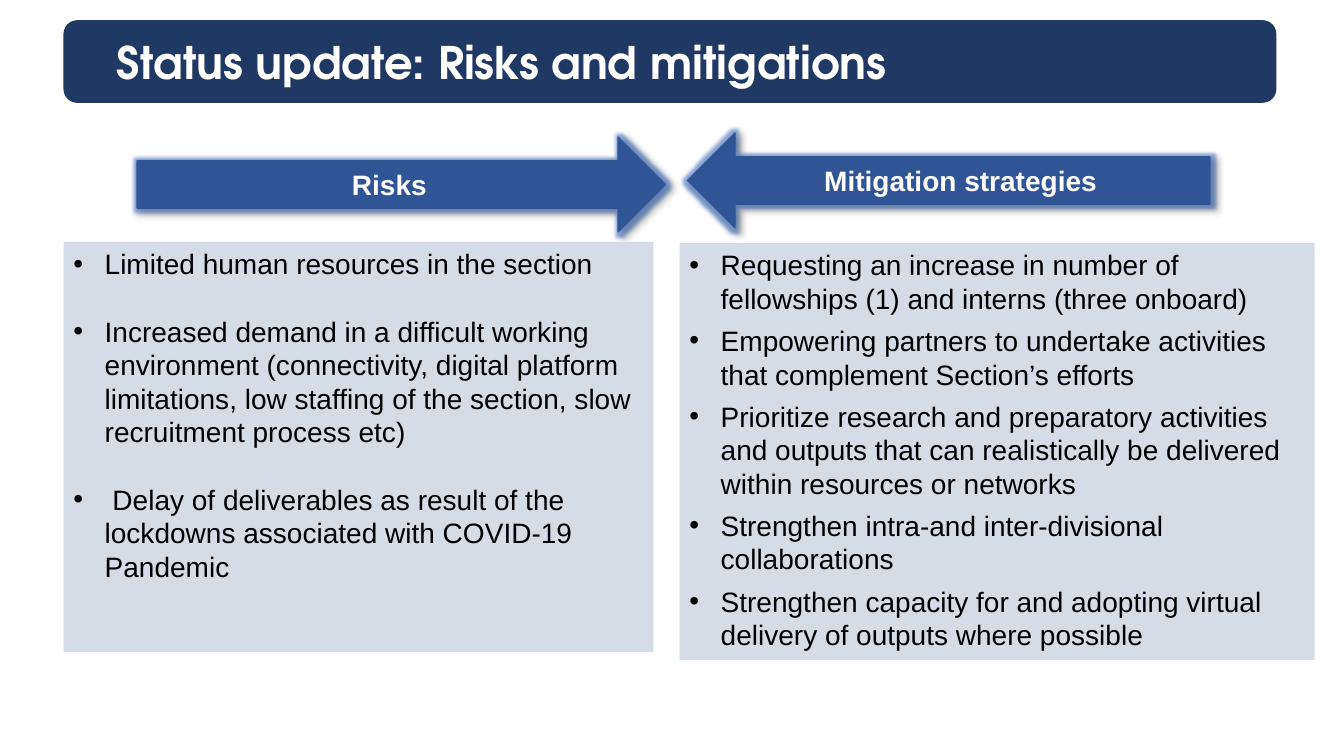
from dataclasses import dataclass

from lxml import etree
from pptx import Presentation
from pptx.dml.color import RGBColor
from pptx.enum.shapes import MSO_SHAPE
from pptx.enum.text import MSO_ANCHOR, PP_ALIGN
from pptx.oxml.ns import qn
from pptx.util import Inches, Pt

RECTANGLE, ROUNDED = MSO_SHAPE.RECTANGLE, MSO_SHAPE.ROUNDED_RECTANGLE
RIGHT_ARROW, LEFT_ARROW = MSO_SHAPE.RIGHT_ARROW, MSO_SHAPE.LEFT_ARROW
TOP, MIDDLE = MSO_ANCHOR.TOP, MSO_ANCHOR.MIDDLE
LEFT, CENTER = PP_ALIGN.LEFT, PP_ALIGN.CENTER


@dataclass(frozen=True)
class Theme:
    navy: str = "203864"
    arrow: str = "2F5597"
    arrow_line: str = "325491"
    glow: str = "4472C4"
    panel: str = "D6DCE5"
    white: str = "FFFFFF"
    black: str = "000000"
    title_font: str = "TeX Gyre Adventor"
    body_font: str = "Arial"
    title_size: int = 32
    body_size: int = 20


THEME = Theme()
SLIDE_SIZE = (13.33, 7.5)
INDENT = 0.31

TITLE = "Status update: Risks and mitigations"
TITLE_AREA = (0.63, 0.2, 12.03, 0.82)

# Areas are left, top, width, height in inches; gap is points after a paragraph.
COLUMNS = [
    {
        "heading": "Risks",
        "arrow": RIGHT_ARROW,
        "arrow_area": (1.36, 1.36, 5.24, 0.94),
        "panel_area": (0.63, 2.4, 5.85, 4.07),
        "gap": 24,
        "points": [
            "Limited human resources in the section",
            "Increased demand in a difficult working environment (connectivity, "
            "digital platform limitations, low staffing of the section, slow "
            "recruitment process etc)",
            " Delay of deliverables as result of the lockdowns associated with "
            "COVID-19 Pandemic",
        ],
    },
    {
        "heading": "Mitigation strategies",
        "arrow": LEFT_ARROW,
        "arrow_area": (6.82, 1.32, 5.18, 0.94),
        "panel_area": (6.74, 2.41, 6.3, 4.14),
        "gap": 6,
        "points": [
            "Requesting an increase in number of fellowships (1) and interns "
            "(three onboard)",
            "Empowering partners to undertake activities that complement "
            "Section’s efforts",
            "Prioritize research and preparatory activities and outputs that can "
            "realistically be delivered within resources or networks",
            "Strengthen intra-and inter-divisional collaborations",
            "Strengthen capacity for and adopting virtual delivery of outputs "
            "where possible",
        ],
    },
]


def add_box(shapes, kind, area, fill, anchor):
    box = shapes.add_shape(kind, *(Inches(value) for value in area))
    box.shadow.inherit = False
    box.fill.solid()
    box.fill.fore_color.rgb = RGBColor.from_string(fill)
    box.line.fill.background()
    box.text_frame.word_wrap = True
    box.text_frame.vertical_anchor = anchor
    return box


def style_text(para, color, size, font, bold=False, align=LEFT):
    para.alignment = align
    for span in para.runs:
        span.font.name = font
        span.font.size = Pt(size)
        span.font.bold = bold
        span.font.color.rgb = RGBColor.from_string(color)


def indent(para, margin, first_line=0):
    properties = para._p.get_or_add_pPr()
    properties.set("marL", str(Inches(margin)))
    properties.set("indent", str(Inches(first_line)))
    return properties


def add_effect(effects, kind, color, alpha, **attributes):
    effect = etree.SubElement(effects, qn(f"a:{kind}"), attributes)
    tint = etree.SubElement(effect, qn("a:srgbClr"), val=color)
    etree.SubElement(tint, qn("a:alpha"), val=str(alpha * 1000))


def add_title(slide):
    bar = add_box(slide.shapes, ROUNDED, TITLE_AREA, THEME.navy, MIDDLE)
    bar.text_frame.text = TITLE
    para = bar.text_frame.paragraphs[0]
    indent(para, 0.39)
    style_text(para, THEME.white, THEME.title_size, THEME.title_font, bold=True)


def add_arrow(group, column):
    arrow = add_box(group.shapes, column["arrow"], column["arrow_area"], THEME.arrow, MIDDLE)
    arrow.line.color.rgb = RGBColor.from_string(THEME.arrow_line)
    arrow.line.width = Pt(1)
    arrow.text_frame.text = column["heading"]
    style_text(arrow.text_frame.paragraphs[0], THEME.white, THEME.body_size,
               THEME.body_font, bold=True, align=CENTER)
    effects = arrow._element.spPr.find(qn("a:effectLst"))
    add_effect(effects, "glow", THEME.glow, 60, rad=str(Pt(5)))
    add_effect(effects, "outerShdw", THEME.black, 40, blurRad=str(Pt(4)),
               dist=str(Pt(3)), dir=str(45 * 60000), algn="tl", rotWithShape="0")


def add_panel(slide, column):
    panel = add_box(slide.shapes, RECTANGLE, column["panel_area"], THEME.panel, TOP)
    panel.text_frame.text = "\n".join(column["points"])
    for para in panel.text_frame.paragraphs:
        properties = indent(para, INDENT, -INDENT)
        etree.SubElement(properties, qn("a:buFont"), typeface=THEME.body_font)
        etree.SubElement(properties, qn("a:buChar"), char="•")
        para.space_after = Pt(column["gap"])
        style_text(para, THEME.black, THEME.body_size, THEME.body_font)


def main():
    deck = Presentation()
    deck.slide_width, deck.slide_height = (Inches(value) for value in SLIDE_SIZE)
    slide = deck.slides.add_slide(deck.slide_layouts[6])
    arrows = slide.shapes.add_group_shape()
    for column in COLUMNS:
        add_arrow(arrows, column)
    add_title(slide)
    for column in COLUMNS:
        add_panel(slide, column)
    deck.save("out.pptx")


if __name__ == "__main__":
    main()
